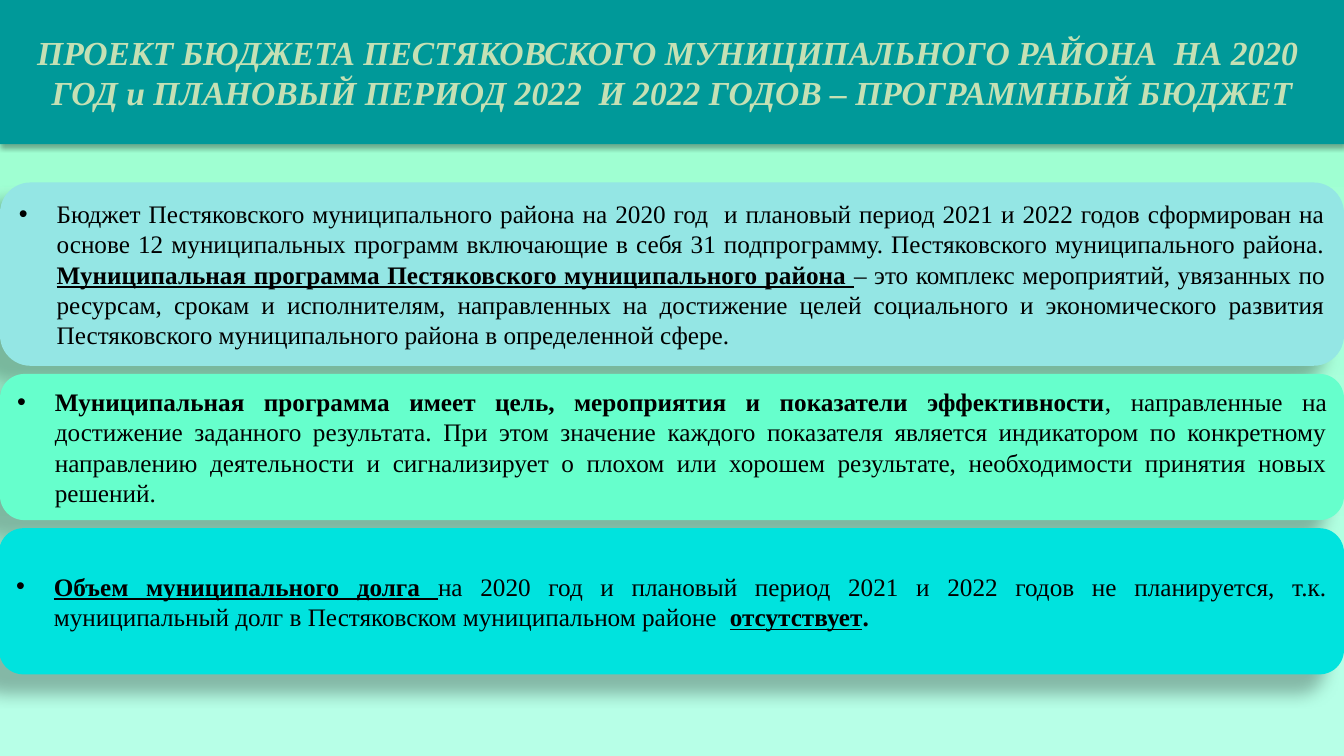
"""Build the slide on the programme-based budget of the Pestyakovsky district."""
from lxml.etree import SubElement
from pptx import Presentation
from pptx.dml.color import RGBColor
from pptx.enum.shapes import MSO_SHAPE
from pptx.enum.text import MSO_ANCHOR, PP_ALIGN
from pptx.oxml.ns import qn
from pptx.util import Pt


def color(hex_value):
    return RGBColor.from_string(hex_value)


def style_panel(panel, fill, opacity, blur, distance, angle):
    panel.fill.solid()
    panel.fill.fore_color.rgb = color(fill)
    panel.line.fill.background()
    panel.text_frame.word_wrap = True
    panel.text_frame.vertical_anchor = MSO_ANCHOR.MIDDLE
    effects = SubElement(panel._element.spPr, qn("a:effectLst"))
    shadow = SubElement(effects, qn("a:outerShdw"), blurRad=str(Pt(blur)), dist=str(Pt(distance)),
                        dir=str(angle * 60000), algn="ctr", rotWithShape="0")
    tint = SubElement(shadow, qn("a:srgbClr"), val="000000")
    SubElement(tint, qn("a:alpha"), val=str(opacity * 1000))


presentation = Presentation()
presentation.slide_width, presentation.slide_height = Pt(960), Pt(540)
slide = presentation.slides.add_slide(presentation.slide_layouts[5])

backdrop = slide.background.fill
backdrop.gradient()
backdrop.gradient_angle = 270
for stop, (position, tone) in zip(backdrop.gradient_stops, [(0, "99FFCC"), (0.93, "B7FFE7")]):
    stop.position = position
    stop.color.rgb = color(tone)

heading = slide.shapes.title
heading.left, heading.top, heading.width, heading.height = Pt(0), Pt(0), Pt(960), Pt(103)
style_panel(heading, "009999", 32, 3.5, 2.2, 90)
heading.text_frame.text = (
    "ПРОЕКТ БЮДЖЕТА ПЕСТЯКОВСКОГО МУНИЦИПАЛЬНОГО РАЙОНА  НА 2020  ГОД и ПЛАНОВЫЙ ПЕРИОД "
    "2022  И 2022 ГОДОВ – ПРОГРАММНЫЙ БЮДЖЕТ")
heading_line = heading.text_frame.paragraphs[0]
heading_line.alignment = PP_ALIGN.CENTER
heading_line.font.name = "Times New Roman"
heading_line.font.size = Pt(24)
heading_line.font.bold = heading_line.font.italic = True
heading_line.font.color.rgb = color("C5E0B4")

statements = [
    (0, 130.3, 960, 131, "94E6E4", [
        ("Бюджет Пестяковского муниципального района на 2020 год  и плановый период 2021 и 2022 годов "
         "сформирован на основе 12 муниципальных программ включающие в себя 31 подпрограмму. "
         "Пестяковского муниципального района. ", False, False),
        ("Муниципальная программа Пестяковского муниципального района ", True, True),
        ("– это комплекс мероприятий, увязанных по ресурсам, срокам и исполнителям, направленных на "
         "достижение целей социального и экономического развития Пестяковского муниципального района "
         "в определенной сфере. ", False, False)]),
    (0, 267.1, 960, 104.4, "66FFCC", [
        ("Муниципальная программа имеет цель, мероприятия и показатели эффективности", True, False),
        (", направленные на достижение заданного результата. При этом значение каждого показателя "
         "является индикатором по конкретному направлению деятельности и сигнализирует о плохом или "
         "хорошем результате, необходимости принятия новых решений. ", False, False)]),
    (-0.7, 377.3, 960.7, 104.4, "00E3DE", [
        ("Объем муниципального долга ", True, True),
        ("на 2020 год и плановый период 2021 и 2022 годов не планируется, т.к. муниципальный долг "
         "в Пестяковском муниципальном районе  ", False, False),
        ("отсутствует", True, True),
        (".", True, False)]),
]

for left, top, width, height, fill, phrases in statements:
    statement = slide.shapes.add_shape(MSO_SHAPE.ROUNDED_RECTANGLE, Pt(left), Pt(top), Pt(width), Pt(height))
    style_panel(statement, fill, 28, 11.8, 19.7, 141)
    paragraph = statement.text_frame.paragraphs[0]
    paragraph.alignment = PP_ALIGN.JUSTIFY
    properties = paragraph._p.get_or_add_pPr()
    properties.set("marL", str(Pt(27)))
    properties.set("indent", str(Pt(-27)))
    SubElement(properties, qn("a:buFont"), typeface="Arial")
    SubElement(properties, qn("a:buChar"), char="•")
    paragraph.font.name = "Times New Roman"
    paragraph.font.size = Pt(18)
    paragraph.font.color.rgb = color("000000")
    for words, bold, underline in phrases:
        phrase = paragraph.add_run()
        phrase.text = words
        phrase.font.bold = bold
        phrase.font.underline = underline

presentation.save("out.pptx")
